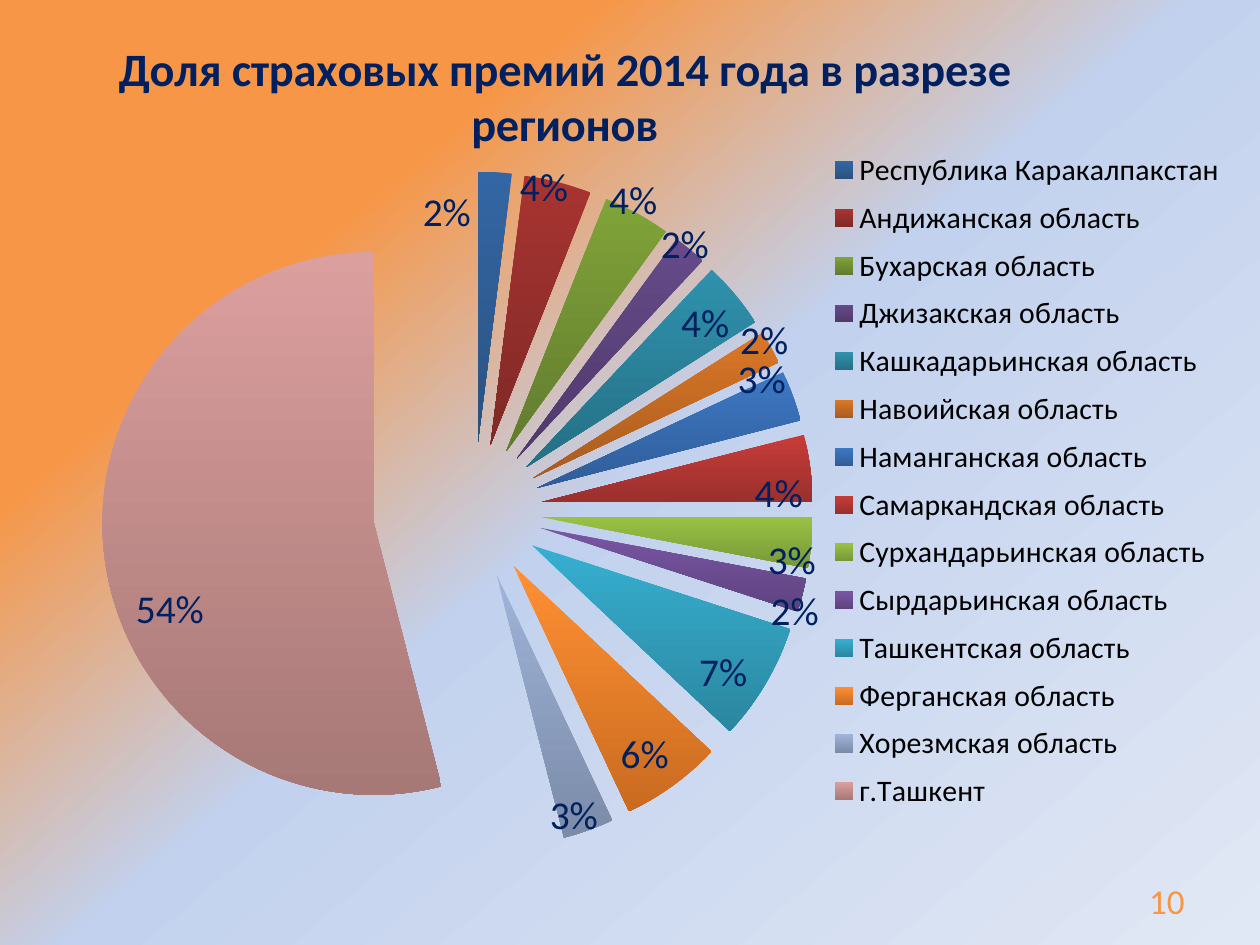
from copy import deepcopy
from dataclasses import dataclass

from lxml import etree
from pptx import Presentation
from pptx.chart.data import CategoryChartData
from pptx.dml.color import RGBColor as RGB
from pptx.enum.chart import XL_CHART_TYPE as CT, XL_LABEL_POSITION as LP, XL_LEGEND_POSITION as LG
from pptx.enum.text import MSO_ANCHOR as ANC, PP_ALIGN as AL
from pptx.oxml.ns import qn
from pptx.util import Inches, Pt


@dataclass(frozen=True)
class Theme:
    font: str = "Calibri"
    navy: str = "002060"
    black: str = "000000"
    orange: str = "F79646"
    title: float = 26.5
    label: float = 22.5
    number: float = 20
    legend: float = 17
    background: tuple = ((0.25, "F79646"), (0.5, "C2D1ED"), (1, "E1E8F5"))


REGIONS = [
    ("Республика Каракалпакстан", 2, "3366A5", "2B527F", (-0.04, 0.01)),
    ("Андижанская область", 4, "A83431", "7F2926", (0.01, -0.03)),
    ("Бухарская область", 4, "80A339", "627C2F", (0.02, -0.05)),
    ("Джизакская область", 2, "664A8A", "4F3A6A", (0.02, -0.04)),
    ("Кашкадарьинская область", 4, "2F91AC", "257085", None),
    ("Навоийская область", 2, "DB7726", "A85C20", (0.02, -0.04)),
    ("Наманганская область", 3, "3D78C4", "305D98", (0, -0.05)),
    ("Самаркандская область", 4, "C83C39", "9A302D", None),
    ("Сурхандарьинская область", 3, "99C244", "779738", (0.01, 0.05)),
    ("Сырдарьинская область", 2, "7956A4", "5E437F", (0.02, 0.05)),
    ("Ташкентская область", 7, "36AFD0", "2B87A0", (-0.01, 0.02)),
    ("Ферганская область", 6, "FF9034", "CA6B20", None),
    ("Хорезмская область", 3, "A0B4D9", "7B8BA8", (0.01, 0.02)),
    ("г.Ташкент", 54, "DB9F9E", "A67876", (0.02, 0.09)),
]
EXPLOSION = 25
CAPITAL_EXPLOSION = 37


class Deck:
    def __init__(self, prs, theme):
        self.t = theme
        self.s = prs.slides.add_slide(prs.slide_layouts[6])

    def style(self, font, **fmt):
        for key, value in {"name": self.t.font, "bold": False, **fmt}.items():
            if key == "color":
                font.color.rgb = RGB.from_string(value)
            else:
                setattr(font, key, value)

    def gradient(self, fill, colors, angle):
        fill.gradient()
        fill.gradient_angle = angle
        for stop, (pos, color) in zip(fill.gradient_stops, colors):
            stop.position = pos
            stop.color.rgb = RGB.from_string(color)

    def background(self):
        first, middle, last = self.t.background
        self.gradient(self.s.background.fill, (first, last), 310)
        stops = self.s.element.find(".//" + qn("a:gsLst"))
        stops.insert(1, deepcopy(stops[0]))
        stops[1].set("pos", str(int(middle[0] * 100000)))
        stops[1][0].set("val", middle[1])

    def layout(self, after, edge=False, **box):
        for old in after.getparent().findall(qn("c:layout")):
            after.getparent().remove(old)
        lay = etree.Element(qn("c:layout"))
        manual = etree.SubElement(lay, qn("c:manualLayout"))
        modes = {"xMode": "edge", "yMode": "edge"} if edge else {}
        for key, value in {**modes, **box}.items():
            etree.SubElement(manual, qn("c:" + key)).set("val", str(value))
        after.addnext(lay)
        return manual

    def text(self, text, x, y, w, h, **fmt):
        tb = self.s.shapes.add_textbox(Inches(x), Inches(y), Inches(w), Inches(h))
        tf = tb.text_frame
        tf.word_wrap, tf.vertical_anchor = True, ANC.MIDDLE
        p = tf.paragraphs[0]
        p.alignment = AL.RIGHT
        r = p.add_run()
        r.text = text
        self.style(r.font, **fmt)

    def pie(self, title, regions, x, y, w, h):
        t = self.t
        data = CategoryChartData()
        data.categories = [row[0] for row in regions]
        data.add_series("Series 1", [row[1] for row in regions])
        chart = self.s.shapes.add_chart(
            CT.PIE_EXPLODED, Inches(x), Inches(y), Inches(w), Inches(h), data).chart
        self.style(chart.font, size=Pt(t.legend), color=t.black)

        chart.has_title = True
        r = chart.chart_title.text_frame.paragraphs[0].add_run()
        r.text = title
        self.style(r.font, size=Pt(t.title), bold=True, color=t.navy)
        self.layout(chart.chart_title._element.find(qn("c:tx")), True, x=0.06, y=-0.01)

        chart.has_legend = True
        chart.legend.position = LG.RIGHT
        chart.legend.include_in_layout = False
        self.style(chart.legend.font, size=Pt(t.legend), color=t.black)
        pos = chart.legend._element.find(qn("c:legendPos"))
        self.layout(pos, True, x=0.66, y=0.13, w=0.34, h=0.79)

        plot = chart.plots[0]
        plot.vary_by_categories = True
        area = chart._chartSpace.find(".//" + qn("c:plotArea"))
        marker = etree.Element("marker")
        area.insert(0, marker)
        manual = self.layout(marker, True, x=0.08, y=0.16, w=0.57, h=0.8)
        area.remove(marker)
        target = etree.Element(qn("c:layoutTarget"))
        target.set("val", "inner")
        manual.insert(0, target)

        self.slices(plot.series[0], regions)

    def slices(self, series, regions):
        t = self.t
        label_style = {"size": Pt(t.label), "color": t.navy}
        labels = series.data_labels
        labels.show_percentage, labels.show_value = True, False
        labels.number_format, labels.number_format_is_linked = "0%", False
        labels.position = LP.INSIDE_END
        self.style(labels.font, **label_style)
        for i, (_, _, top, bottom, offset) in enumerate(regions):
            point = series.points[i]
            self.gradient(point.format.fill, ((0, top), (1, bottom)), 270)
            dpt = series._element.findall(qn("c:dPt"))[i]
            for old in dpt.findall(qn("c:explosion")):
                dpt.remove(old)
            burst = etree.Element(qn("c:explosion"))
            burst.set("val", str(CAPITAL_EXPLOSION if i == len(regions) - 1 else EXPLOSION))
            dpt.find(qn("c:spPr")).addprevious(burst)
            if offset:
                label = point.data_label
                self.style(label.font, **label_style)
                label.position = LP.INSIDE_END
                el = series._element.xpath(f"c:dLbls/c:dLbl[c:idx/@val='{i}']")[0]
                el.find(qn("c:showVal")).set("val", "0")
                el.find(qn("c:showPercent")).set("val", "1")
                self.layout(el.find(qn("c:idx")), x=offset[0], y=offset[1])


def main():
    prs = Presentation()
    prs.slide_width, prs.slide_height = Inches(10), Inches(7.5)
    theme = Theme()
    deck = Deck(prs, theme)
    deck.background()
    deck.pie("Доля страховых премий 2014 года в разрезе регионов", REGIONS, 0.31, 0.23, 9.45, 6.83)
    deck.text("10", 7.17, 6.95, 2.33, 0.4, size=Pt(theme.number), color=theme.orange)
    prs.save("out.pptx")


if __name__ == "__main__":
    main()
